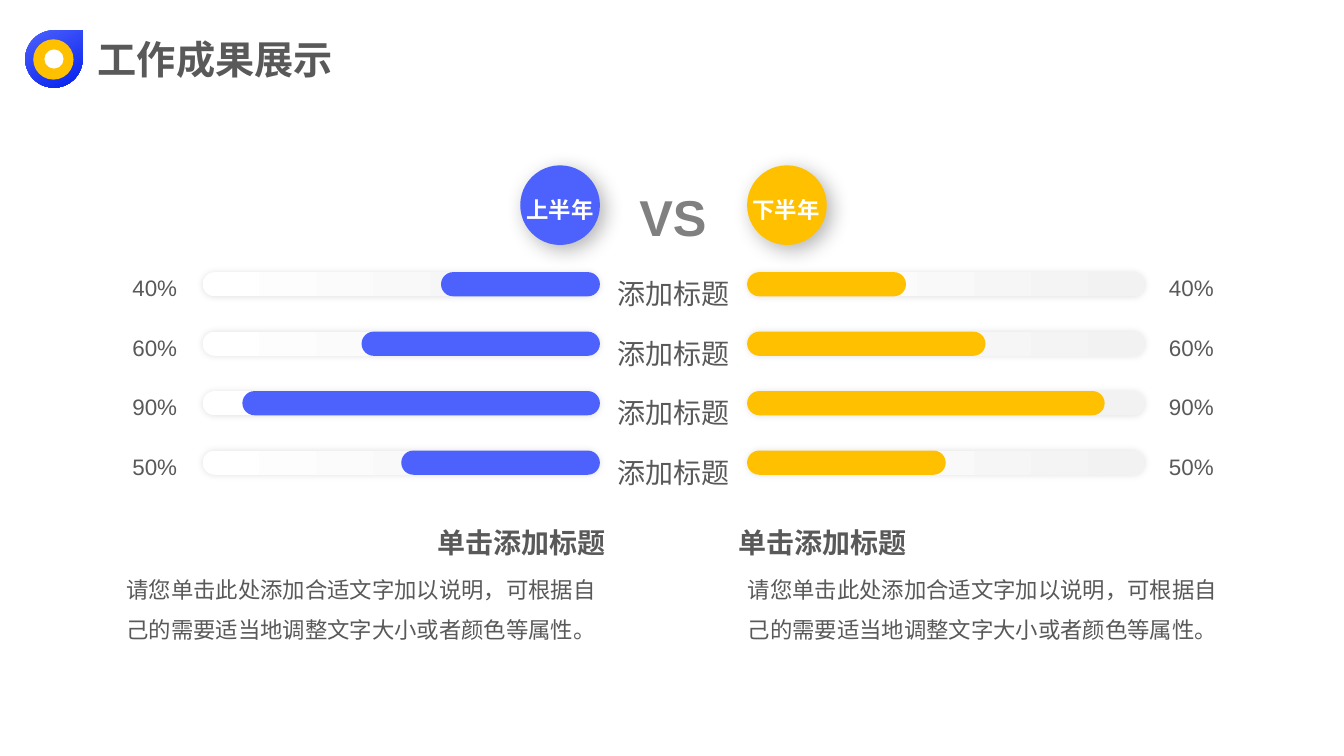
from dataclasses import dataclass

from lxml import etree
from pptx import Presentation
from pptx.dml.color import RGBColor
from pptx.enum.shapes import MSO_SHAPE as Preset
from pptx.enum.text import MSO_ANCHOR as Anchor
from pptx.enum.text import MSO_AUTO_SIZE as AutoSize
from pptx.enum.text import PP_ALIGN as Align
from pptx.oxml.ns import qn
from pptx.shapes.autoshape import Shape
from pptx.slide import Slide
from pptx.util import Inches, Pt

FONT = "Arial"
BLUE, YELLOW, WHITE = "4D62FD", "FFC000", "FFFFFF"
DARK, GREY = "595959", "808080"
TRACK_WIDTH, BAR_HEIGHT = 3.94, 0.24
FIRST_ROW, ROW_STEP = 2.7, 0.59
ROW_LABEL = "添加标题"
SHARES = (0.4, 0.6, 0.9, 0.5)
HEADING = "单击添加标题"
DESCRIPTION = "请您单击此处添加合适文字加以说明，可根据自己的需要适当地调整文字大小或者颜色等属性。"


@dataclass(frozen=True)
class Box:
    left: float
    top: float
    width: float
    height: float


@dataclass(frozen=True)
class Style:
    size: int = 16
    color: str = DARK
    bold: bool = False
    align: Align = Align.CENTER
    spacing: float = 1.2
    inset: tuple[float, float] = (0, 0)
    anchor: Anchor = Anchor.TOP
    wrap: bool = False


@dataclass(frozen=True)
class Shadow:
    opacity: int
    blur: int
    distance: int = 0
    angle: int = 0


@dataclass(frozen=True)
class Half:
    name: str
    color: str
    track_left: float
    fills_from_right: bool
    badge: Box
    name_left: float
    percent_left: float
    heading: Box
    description: Box
    align: Align


TRACK_SHADOW = Shadow(opacity=11, blur=5)
BADGE_SHADOW = Shadow(opacity=30, blur=15, distance=5, angle=45)
TITLE_STYLE = Style(28, bold=True, align=Align.LEFT, spacing=1, inset=(0.1, 0.05), wrap=True)
LABEL_STYLE = Style(20, inset=(0.1, 0.05))
PERCENT_STYLE = Style(anchor=Anchor.MIDDLE, wrap=True)
HALVES = (
    Half("上半年", BLUE, 2.01, True, Box(5.16, 1.64, 0.79, 0.79), 5.22, 1.01,
         Box(4.33, 5.15, 1.68, 0.37), Box(1.08, 5.53, 4.93, 0.86), Align.RIGHT),
    Half("下半年", YELLOW, 7.41, False, Box(7.41, 1.64, 0.79, 0.79), 7.46, 11.29,
         Box(7.32, 5.15, 1.68, 0.37), Box(7.32, 5.53, 4.95, 0.86), Align.LEFT),
)


def rgb(color: str) -> RGBColor:
    return RGBColor.from_string(color)


def place(shape: Shape, box: Box) -> None:
    shape.left, shape.top = Inches(box.left), Inches(box.top)
    shape.width, shape.height = Inches(box.width), Inches(box.height)


def write(shape: Shape, text: str, style: Style) -> None:
    frame = shape.text_frame
    frame.text = text
    frame.auto_size = AutoSize.NONE
    frame.word_wrap = style.wrap
    frame.vertical_anchor = style.anchor
    horizontal, vertical = style.inset
    frame.margin_left = frame.margin_right = Inches(horizontal)
    frame.margin_top = frame.margin_bottom = Inches(vertical)
    paragraph = frame.paragraphs[0]
    paragraph.alignment = style.align
    paragraph.line_spacing = style.spacing
    font = paragraph.runs[0].font
    font.name, font.size, font.bold = FONT, Pt(style.size), style.bold
    font.color.rgb = rgb(style.color)


def add_text(slide: Slide, box: Box, text: str, style: Style) -> None:
    shape = slide.shapes.add_textbox(0, 0, 0, 0)
    place(shape, box)
    write(shape, text, style)


def add_filled(slide: Slide, preset: Preset, box: Box, *colors: str, angle: int = 0) -> Shape:
    """Add a borderless shape; two colours make a gradient at a clockwise angle."""
    shape = slide.shapes.add_shape(preset, 0, 0, 0, 0)
    place(shape, box)
    shape.shadow.inherit = False
    shape.line.fill.background()
    if len(colors) == 1:
        shape.fill.solid()
        shape.fill.fore_color.rgb = rgb(colors[0])
    else:
        shape.fill.gradient()
        shape.fill.gradient_angle = -angle % 360
        for stop, color, position in zip(shape.fill.gradient_stops, colors, (0, 1)):
            stop.color.rgb = rgb(color)
            stop.position = position
    return shape


def add_bar(slide: Slide, box: Box, *colors: str) -> Shape:
    bar = add_filled(slide, Preset.ROUNDED_RECTANGLE, box, *colors)
    bar.adjustments[0] = 0.5
    return bar


def cast_shadow(shape: Shape, shadow: Shadow) -> None:
    effects = shape.element.spPr.find(qn("a:effectLst"))
    outer = etree.SubElement(
        effects, qn("a:outerShdw"), blurRad=str(Pt(shadow.blur)),
        dist=str(Pt(shadow.distance)), dir=str(shadow.angle * 60000),
        algn="ctr", rotWithShape="0")
    color = etree.SubElement(outer, qn("a:srgbClr"), val="000000")
    etree.SubElement(color, qn("a:alpha"), val=str(shadow.opacity * 1000))


def add_header(slide: Slide) -> None:
    add_filled(slide, Preset.TEAR, Box(0.25, 0.3, 0.57, 0.57), BLUE, "0420ED", angle=60)
    add_filled(slide, Preset.OVAL, Box(0.33, 0.39, 0.4, 0.4), YELLOW)
    add_filled(slide, Preset.OVAL, Box(0.44, 0.49, 0.19, 0.19), WHITE)
    title = slide.shapes.title
    place(title, Box(0.87, 0.3, 2.6, 0.57))
    write(title, "工作成果展示", TITLE_STYLE)


def add_half(slide: Slide, half: Half) -> None:
    for row, share in enumerate(SHARES):
        top = FIRST_ROW + row * ROW_STEP
        track = add_bar(slide, Box(half.track_left, top, TRACK_WIDTH, BAR_HEIGHT), WHITE, "F2F2F2")
        cast_shadow(track, TRACK_SHADOW)
        width = TRACK_WIDTH * share
        left = half.track_left + (TRACK_WIDTH - width if half.fills_from_right else 0)
        add_bar(slide, Box(left, top, width, BAR_HEIGHT), half.color)
        add_text(slide, Box(half.percent_left, top - 0.06, 1.05, 0.38), f"{share:.0%}", PERCENT_STYLE)
    badge = add_filled(slide, Preset.OVAL, half.badge, half.color)
    cast_shadow(badge, BADGE_SHADOW)
    add_text(slide, Box(half.name_left, 1.89, 0.67, 0.3), half.name, Style(color=WHITE, bold=True))
    add_text(slide, half.heading, HEADING, Style(20, bold=True, align=half.align))
    add_text(slide, half.description, DESCRIPTION,
             Style(align=half.align, spacing=1.5, inset=(0.1, 0.05), wrap=True))


def main() -> None:
    presentation = Presentation()
    presentation.slide_width, presentation.slide_height = Inches(13.33), Inches(7.5)
    slide = presentation.slides.add_slide(presentation.slide_layouts.get_by_name("Title Only"))
    add_header(slide)
    for half in HALVES:
        add_half(slide, half)
    add_text(slide, Box(6.34, 1.73, 0.67, 0.66), "VS", Style(36, GREY, bold=True))
    for row in range(len(SHARES)):
        add_text(slide, Box(6.02, FIRST_ROW - 0.07 + row * ROW_STEP, 1.32, 0.47), ROW_LABEL, LABEL_STYLE)
    presentation.save("out.pptx")


if __name__ == "__main__":
    main()
